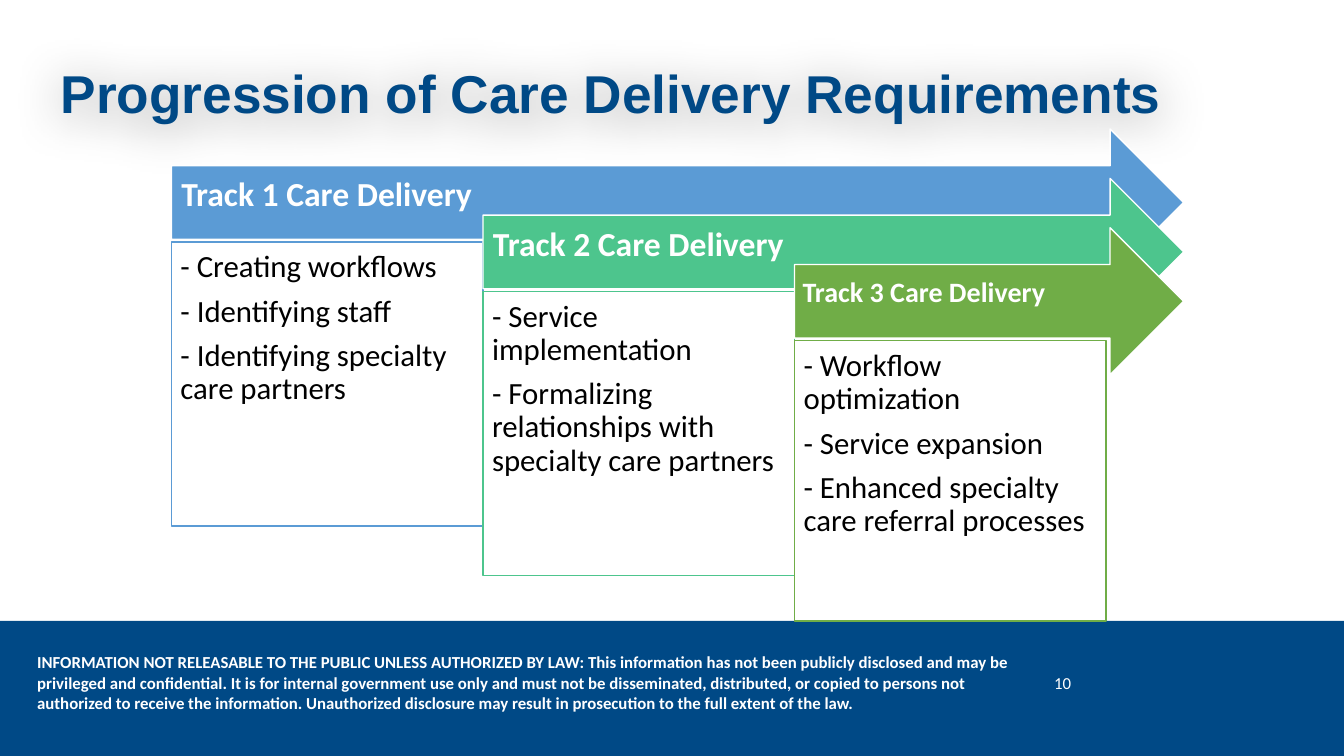
from lxml import etree
from pptx import Presentation
from pptx.dml.color import RGBColor
from pptx.enum import shapes, text
from pptx.util import Inches, Pt

TITLE = "Progression of Care Delivery Requirements"
NOTICE = (
    "INFORMATION NOT RELEASABLE TO THE PUBLIC UNLESS AUTHORIZED BY LAW: "
    "This information has not been publicly disclosed and may be privileged "
    "and confidential. It is for internal government use only and must not be "
    "disseminated, distributed, or copied to persons not authorized to receive "
    "the information. Unauthorized disclosure may result in prosecution to the "
    "full extent of the law."
)
PAGE = "10"
# Heading, heading size, heading inset, colour, box height, tasks
TRACKS = [
    ("Track 1 Care Delivery", 24, 0.1, "blue", 2.82,
     ["- Creating workflows", "- Identifying staff",
      "- Identifying specialty care partners"]),
    ("Track 2 Care Delivery", 24, 0.1, "teal", 2.82,
     ["- Service implementation",
      "- Formalizing relationships with specialty care partners"]),
    ("Track 3 Care Delivery", 20, 0.08, "green", 2.78,
     ["- Workflow optimization", "- Service expansion",
      "- Enhanced specialty care referral processes"]),
]
COLORS = {"navy": "004986", "blue": "5B9BD5", "teal": "4DC58D",
          "green": "70AD47", "white": "FFFFFF", "black": "000000"}
LEFT, TOP, STEP, DROP = 1.7, 1.28, 3.09, 0.49
TIP, HEAD, GAP = 11.74, 1.46, 1.12


def color(name):
    return RGBColor.from_string(COLORS[name])


def write(shape, lines, size, ink, bold=False, font="Calibri",
          inset=(0.1, 0.05, 0.1, 0.05), anchor=text.MSO_ANCHOR.TOP,
          align=text.PP_ALIGN.LEFT, space=None, after=0):
    frame = shape.text_frame
    frame.word_wrap = True
    frame.auto_size = text.MSO_AUTO_SIZE.NONE
    frame.vertical_anchor = anchor
    (frame.margin_left, frame.margin_top,
     frame.margin_right, frame.margin_bottom) = map(Inches, inset)
    frame.text = "\n".join(lines)
    for para in frame.paragraphs:
        para.alignment = align
        para.line_spacing = space
        para.space_before = Pt(0)
        para.space_after = Pt(after)
        para.font.name, para.font.size = font, Pt(size)
        para.font.bold, para.font.color.rgb = bold, color(ink)


def block(slide, kind, at, fill, line=None):
    shape = slide.shapes.add_shape(kind, *map(Inches, at))
    shape.shadow.inherit = False
    shape.fill.solid()
    shape.fill.fore_color.rgb = color(fill)
    if line:
        shape.line.color.rgb = color(line)
        shape.line.width = Pt(1)
    else:
        shape.line.fill.background()
    return shape


def label(slide, at, words, **style):
    box = slide.shapes.add_textbox(*map(Inches, at))
    write(box, [words], 12, "white", **style)


def glow(shape):
    """Soft shadow behind the title."""
    shape.shadow.inherit = False
    ns = "http://schemas.openxmlformats.org/drawingml/2006/main"
    effects = shape.element.spPr.find(f"{{{ns}}}effectLst")
    effects.append(etree.fromstring(
        f'<a:outerShdw xmlns:a="{ns}" blurRad="444500" dist="38100" '
        'dir="5400000" algn="ctr" rotWithShape="0"><a:srgbClr val="000000">'
        '<a:alpha val="40000"/></a:srgbClr></a:outerShdw>'))


def main():
    deck = Presentation()
    deck.slide_width, deck.slide_height = Inches(13.33), Inches(7.5)
    slide = deck.slides.add_slide(deck.slide_layouts[5])
    rect = shapes.MSO_SHAPE.RECTANGLE
    middle = text.MSO_ANCHOR.MIDDLE

    # Title
    title = slide.shapes.title
    title.left, title.top = Inches(0.5), Inches(0.48)
    title.width, title.height = Inches(12.01), Inches(0.81)
    write(title, [TITLE], 38, "navy", bold=True, font="Arial",
          anchor=text.MSO_ANCHOR.BOTTOM, space=0.9)
    glow(title)

    # Footer
    block(slide, rect, (0, 6.16, 13.33, 1.34), "navy")
    label(slide, (0.27, 6.42, 9.95, 0.71), NOTICE, bold=True)
    label(slide, (10.29, 6.57, 0.5, 0.4), PAGE, anchor=middle,
          align=text.PP_ALIGN.CENTER)

    # Stepped tracks: an arrow with a task box below
    for i, (name, size, pad, hue, tall, tasks) in enumerate(TRACKS):
        x, y = LEFT + i * STEP, TOP + i * DROP
        arrow = block(slide, shapes.MSO_SHAPE.RIGHT_ARROW,
                      (x, y, TIP - x, HEAD), hue, "white")
        write(arrow, [name], size, "white", bold=True, anchor=middle,
              inset=(pad, pad, 0.28, 0.23), space=0.9)
        box = block(slide, rect, (x, y + GAP, STEP, tall), "white", hue)
        write(box, tasks, 22, "black", inset=(0.09,) * 4, space=0.9, after=8)

    deck.save("out.pptx")


if __name__ == "__main__":
    main()
